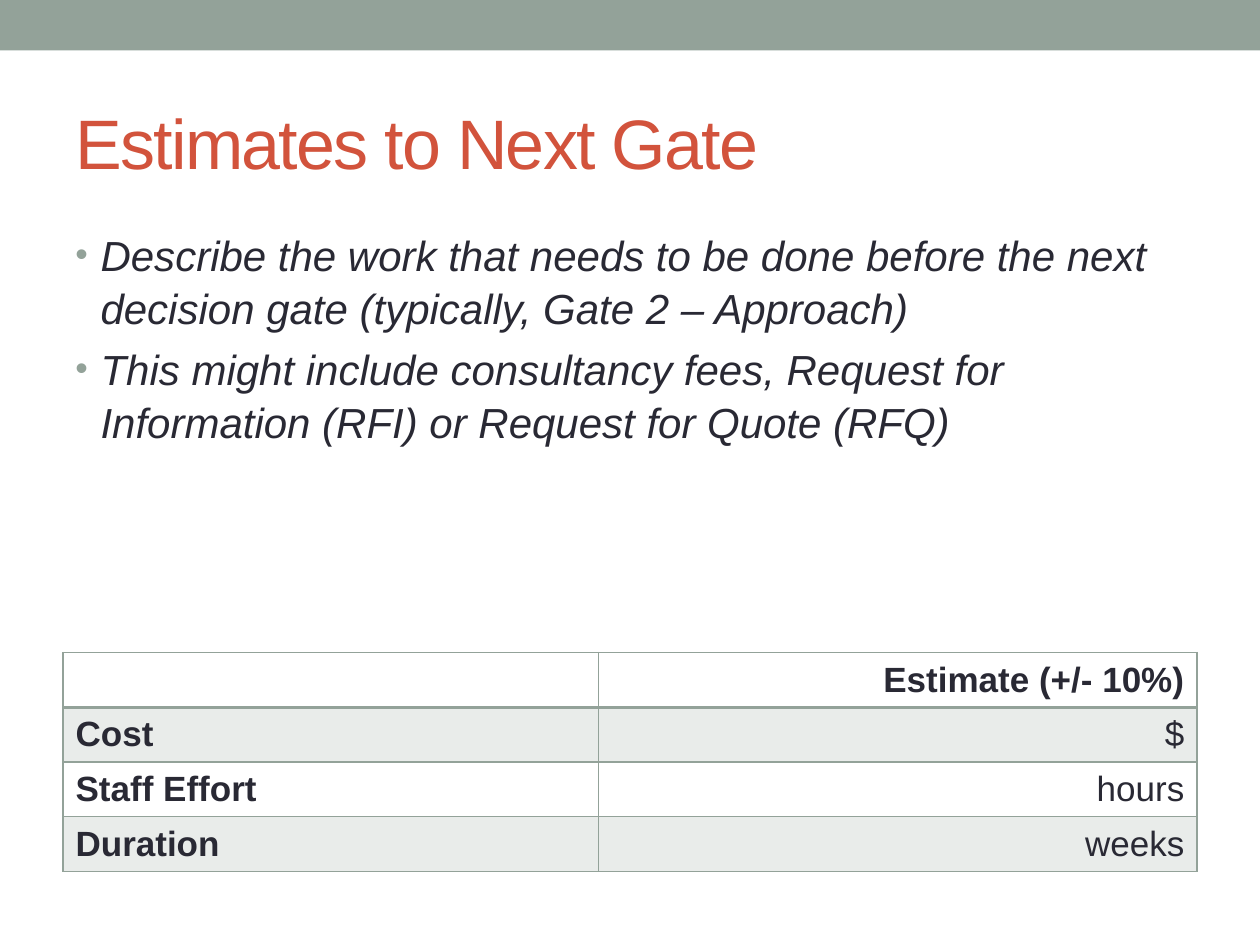
"""Build the slide with estimates to the next decision gate."""
from typing import NamedTuple

from lxml.etree import SubElement
from pptx import Presentation
from pptx.dml.color import RGBColor
from pptx.enum.shapes import MSO_SHAPE
from pptx.enum.text import MSO_ANCHOR, PP_ALIGN
from pptx.oxml.ns import qn
from pptx.util import Inches, Pt

FONT = "Arial"
SAGE = "93A299"
RED = "D2533C"
INK = "292934"
BULLETS = (
    "Describe the work that needs to be done before the next decision gate (typically, Gate 2 – Approach)",
    "This might include consultancy fees, Request for Information (RFI) or Request for Quote (RFQ)",
)


class EstimateRow(NamedTuple):
    label: str
    estimate: str


ROWS = (
    EstimateRow("", "Estimate (+/- 10%)"),
    EstimateRow("Cost", "$"),
    EstimateRow("Staff Effort", "hours"),
    EstimateRow("Duration", "weeks"),
)


def color(value: str) -> RGBColor:
    return RGBColor.from_string(value)


def style_paragraph(paragraph, size: float, ink: str, bold: bool = False, italic: bool = False) -> None:
    font = paragraph.font
    font.name = FONT
    font.size = Pt(size)
    font.bold = bold
    font.italic = italic
    font.color.rgb = color(ink)


def add_band(slide) -> None:
    band = slide.shapes.add_shape(MSO_SHAPE.RECTANGLE, 0, 0, Inches(10), Inches(0.4))
    band.shadow.inherit = False
    band.fill.solid()
    band.fill.fore_color.rgb = color(SAGE)
    band.line.fill.background()


def format_title(slide, text: str) -> None:
    title = slide.shapes.title
    title.left, title.top, title.width, title.height = map(Inches, (0.5, 0.58, 9, 1.08))
    frame = title.text_frame
    frame.text = text
    frame.vertical_anchor = MSO_ANCHOR.MIDDLE
    paragraph = frame.paragraphs[0]
    paragraph.alignment = PP_ALIGN.LEFT
    style_paragraph(paragraph, 40, RED)
    paragraph.runs[0]._r.get_or_add_rPr().set("spc", "-100")


def add_bullet(paragraph) -> None:
    properties = paragraph._p.get_or_add_pPr()
    properties.set("marL", str(Inches(0.2)))
    properties.set("indent", str(Inches(-0.2)))
    bullet_color = SubElement(properties, qn("a:buClr"))
    SubElement(bullet_color, qn("a:srgbClr"), val=SAGE)
    SubElement(properties, qn("a:buSzPct"), val="85000")
    SubElement(properties, qn("a:buFont"), typeface=FONT)
    SubElement(properties, qn("a:buChar"), char="•")


def add_guidance(slide) -> None:
    box = slide.shapes.add_textbox(*map(Inches, (0.5, 1.75, 9, 3.42)))
    frame = box.text_frame
    frame.word_wrap = True
    frame.text = "\n".join(BULLETS)
    for paragraph in frame.paragraphs:
        paragraph.space_before = Pt(4.8)
        paragraph.line_spacing = 1.05
        add_bullet(paragraph)
        style_paragraph(paragraph, 24, INK, italic=True)


def set_borders(cell, top: float, bottom: float) -> None:
    properties = cell._tc.get_or_add_tcPr()
    for side, width in (("L", 1), ("R", 1), ("T", top), ("B", bottom)):
        line = SubElement(properties, qn(f"a:ln{side}"), w=str(Pt(width)))
        fill = SubElement(line, qn("a:solidFill"))
        SubElement(fill, qn("a:srgbClr"), val=SAGE)


def fill_cell(cell, shaded: bool) -> None:
    if not shaded:
        cell.fill.background()
        return
    cell.fill.solid()
    cell.fill.fore_color.rgb = color(SAGE)
    tint = cell._tc.tcPr.find(qn("a:solidFill")).find(qn("a:srgbClr"))
    SubElement(tint, qn("a:alpha"), val="20000")


def add_estimates(slide) -> None:
    row_height = Inches(0.41)
    frame = slide.shapes.add_table(
        len(ROWS), 2, Inches(0.5), Inches(5.18), Inches(9), row_height * len(ROWS)
    )
    table = frame.table
    table.first_row = table.horz_banding = False
    for column, width in zip(table.columns, (4.25, 4.75)):
        column.width = Inches(width)
    for row_index, row in enumerate(ROWS):
        table.rows[row_index].height = row_height
        for column_index, text in enumerate(row):
            cell = table.cell(row_index, column_index)
            cell.text = text
            cell.vertical_anchor = MSO_ANCHOR.MIDDLE
            set_borders(cell, 2 if row_index == 1 else 1, 2 if row_index == 0 else 1)
            fill_cell(cell, row_index % 2 == 1)
            paragraph = cell.text_frame.paragraphs[0]
            paragraph.alignment = PP_ALIGN.RIGHT if column_index else PP_ALIGN.LEFT
            style_paragraph(paragraph, 20, INK, bold=row_index == 0 or column_index == 0)


def main() -> None:
    presentation = Presentation()
    presentation.slide_width = Inches(10)
    presentation.slide_height = Inches(7.5)
    slide = presentation.slides.add_slide(presentation.slide_layouts[5])
    add_band(slide)
    format_title(slide, "Estimates to Next Gate")
    add_guidance(slide)
    add_estimates(slide)
    presentation.save("out.pptx")


if __name__ == "__main__":
    main()
